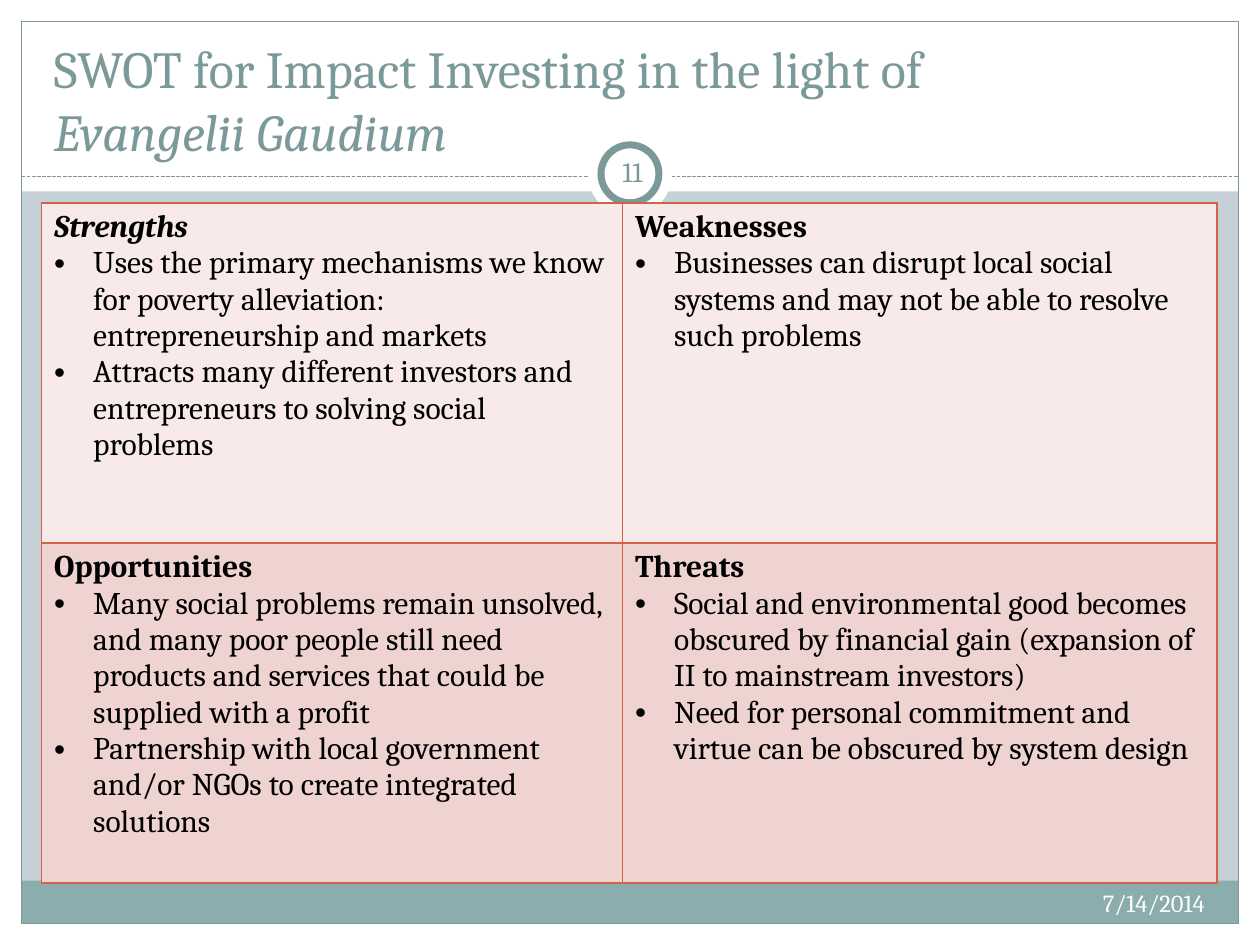
from lxml import etree
from pptx import Presentation
from pptx import util as u
from pptx.dml.color import RGBColor
from pptx.enum import dml, shapes, text
from pptx.oxml import ns

# Content
TITLE = [("SWOT for Impact Investing in the light of ", False),
         ("Evangelii Gaudium", True)]
DATE = "7/14/2014"
PAGE = "11"
# Each quadrant: heading, italic heading, points
SWOT = [
    [("Strengths", True,
      ["Uses the primary mechanisms we know for poverty alleviation: "
       "entrepreneurship and markets",
       "Attracts many different investors and entrepreneurs to solving "
       "social problems"]),
     ("Weaknesses", False,
      ["Businesses can disrupt local social systems and may not be able to "
       "resolve such problems"])],
    [("Opportunities", False,
      ["Many social problems remain unsolved, and many poor people still "
       "need products and services that could be supplied with a profit",
       "Partnership with local government and/or NGOs to create integrated "
       "solutions"]),
     ("Threats", False,
      ["Social and environmental good becomes obscured by financial gain "
       "(expansion of II to mainstream investors)",
       "Need for personal commitment and virtue can be obscured by system "
       "design"])],
]

THEME = {
    "font": "Cambria",
    "page": "C5D1D7", "white": "FFFFFF", "black": "000000",
    "accent": "7C999A", "footer": "8CADAE", "border": "D16349",
    "rows": ["F7EAE9", "EED3D0"],
    "title_pt": 29.7, "body_pt": 18, "page_pt": 16, "date_pt": 14,
}

# Layout, in inches
W, H = 10, 7.5
EDGE = 0.17
HEADER_H, RULE_Y = 1.52, 1.4
BADGE_Y = 1.38
TABLE_X, TABLE_Y = 0.33, 1.61
COLS, ROW_H = [4.61, 4.72], 2.7
INDENT = 0.31

prs = Presentation()
prs.slide_width, prs.slide_height = u.Inches(W), u.Inches(H)
slide = prs.slides.add_slide(prs.slide_layouts[6])


def rgb(name):
    return RGBColor.from_string(THEME.get(name, name))


def inches(*values):
    return [u.Inches(v) for v in values]


def add_block(box, fill=None, line=None, width=0.75,
              kind=shapes.MSO_SHAPE.RECTANGLE):
    block = slide.shapes.add_shape(kind, *inches(*box))
    block.shadow.inherit = False
    if fill:
        block.fill.solid()
        block.fill.fore_color.rgb = rgb(fill)
    else:
        block.fill.background()
    if line:
        block.line.color.rgb = rgb(line)
        block.line.width = u.Pt(width)
    else:
        block.line.fill.background()


def add_disc(size, **style):
    add_block((W / 2 - size / 2, BADGE_Y - size / 2, size, size),
              kind=shapes.MSO_SHAPE.OVAL, **style)


def add_run(paragraph, words, size, color, bold=False, italic=False):
    run = paragraph.add_run()
    run.text = words
    font = run.font
    font.name, font.size = THEME["font"], u.Pt(THEME[size])
    font.bold, font.italic = bold, italic
    font.color.rgb = rgb(color)


def add_label(box, runs, size, color, align, anchor, inset=None):
    frame = slide.shapes.add_textbox(*inches(*box)).text_frame
    frame.word_wrap = True
    frame.vertical_anchor = anchor
    if inset is not None:
        frame.margin_left = frame.margin_right = u.Inches(inset)
        frame.margin_top = frame.margin_bottom = u.Inches(inset)
    paragraph = frame.paragraphs[0]
    paragraph.alignment = align
    for words, italic in runs:
        add_run(paragraph, words, size, color, italic=italic)


def add_bullet(paragraph):
    props = paragraph._p.get_or_add_pPr()
    props.set("marL", str(u.Inches(INDENT)))
    props.set("indent", str(-u.Inches(INDENT)))
    etree.SubElement(props, ns.qn("a:buFont")).set("typeface", "Arial")
    etree.SubElement(props, ns.qn("a:buChar")).set("char", "•")


def add_borders(cell):
    props = cell._tc.get_or_add_tcPr()
    for side in ("lnL", "lnR", "lnT", "lnB"):
        border = etree.SubElement(props, ns.qn("a:" + side), w=str(u.Pt(1)))
        solid = etree.SubElement(border, ns.qn("a:solidFill"))
        etree.SubElement(solid, ns.qn("a:srgbClr")).set("val", THEME["border"])


# Background, white margins, footer band and frame
slide.background.fill.solid()
slide.background.fill.fore_color.rgb = rgb("page")
for margin in [(0, H - EDGE, W, EDGE), (0, 0, W, HEADER_H),
               (0, 0, EDGE, H), (W - EDGE, 0, EDGE, H)]:
    add_block(margin, "white")
inner_w = W - 2 * EDGE
add_block((EDGE, 6.99, inner_w, 0.34), "footer")
add_block((EDGE, EDGE, inner_w, H - 2 * EDGE), line="accent")

# Dashed rule under the title
rule = slide.shapes.add_connector(
    shapes.MSO_CONNECTOR.STRAIGHT, *inches(EDGE, RULE_Y, W - EDGE, RULE_Y))
rule.line.color.rgb = rgb("accent")
rule.line.width = u.Pt(0.75)
rule.line.dash_style = dml.MSO_LINE.SQUARE_DOT
etree.SubElement(rule._element.spPr, ns.qn("a:effectLst"))

# Page number badge
add_disc(0.67, fill="white")
add_disc(0.46, fill="white", line="accent", width=4)

# Title, date and page number
align, anchor = text.PP_ALIGN, text.MSO_ANCHOR
add_label((0.33, 0.44, 7.7, 0.89), TITLE, "title_pt", "accent",
          align.LEFT, anchor.BOTTOM)
add_label((6.33, 7, 3.33, 0.4), [(DATE, False)], "date_pt", "white",
          align.RIGHT, anchor.TOP)
add_label((4.77, 1.12, 0.5, 0.48), [(PAGE, False)], "page_pt", "accent",
          align.CENTER, anchor.MIDDLE, inset=0.05)

# SWOT table
grid = slide.shapes.add_table(
    len(SWOT), len(COLS),
    *inches(TABLE_X, TABLE_Y, sum(COLS), ROW_H * len(SWOT))).table
grid.first_row = grid.horz_banding = False
for column, width in zip(grid.columns, COLS):
    column.width = u.Inches(width)
for r, quadrants in enumerate(SWOT):
    grid.rows[r].height = u.Inches(ROW_H)
    for c, (heading, italic, points) in enumerate(quadrants):
        cell = grid.cell(r, c)
        add_borders(cell)
        cell.fill.solid()
        cell.fill.fore_color.rgb = rgb(THEME["rows"][r])
        frame = cell.text_frame
        add_run(frame.paragraphs[0], heading, "body_pt", "black", True, italic)
        for point in points:
            paragraph = frame.add_paragraph()
            add_bullet(paragraph)
            add_run(paragraph, point, "body_pt", "black")

prs.save("out.pptx")
